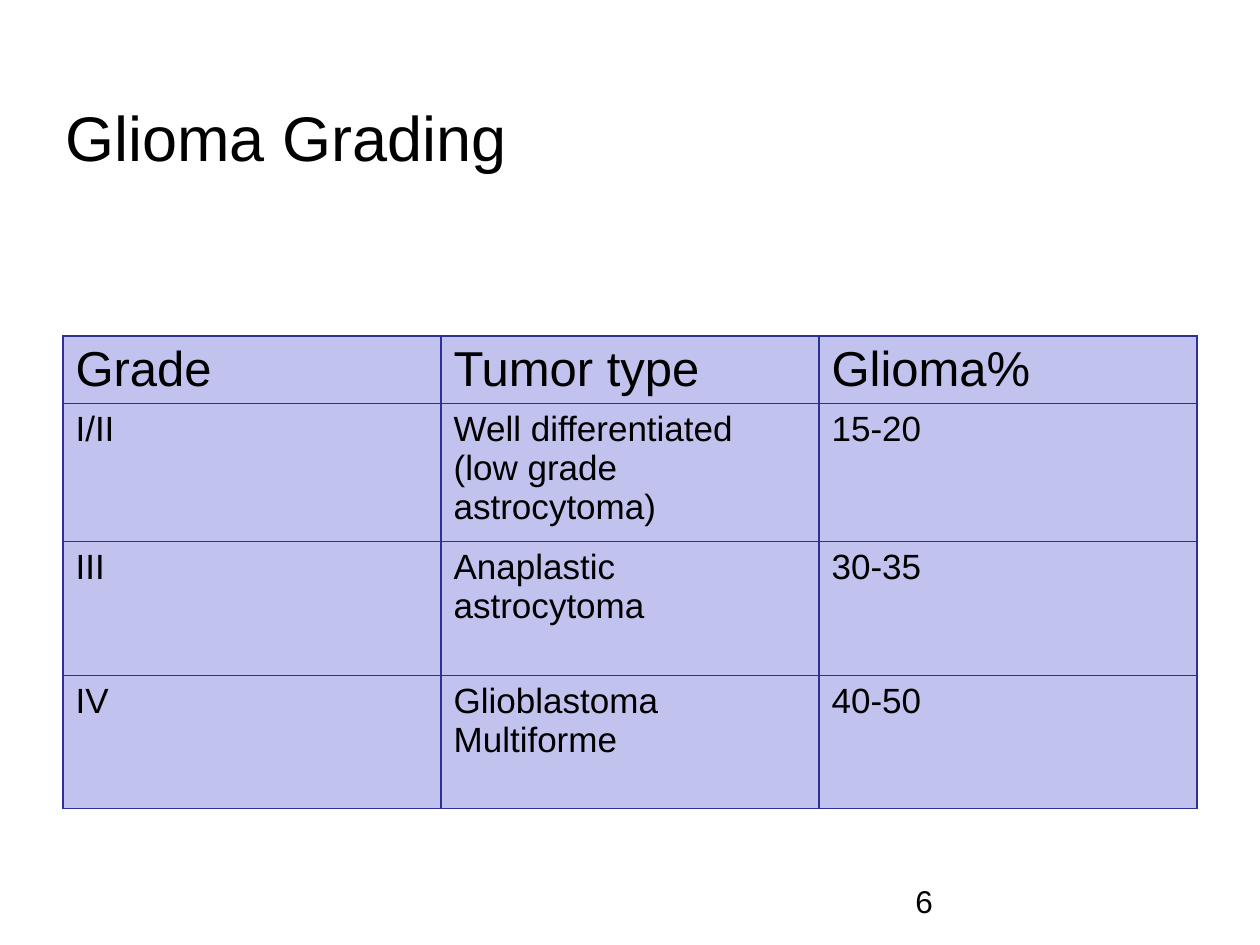
from typing import NamedTuple

from lxml import etree
from pptx import Presentation
from pptx import util as u
from pptx.dml.color import RGBColor
from pptx.enum import text
from pptx.oxml import ns

BLACK = RGBColor(0x00, 0x00, 0x00)
LAVENDER = RGBColor(0xC2, 0xC2, 0xEE)
NAVY = RGBColor(0x2F, 0x2F, 0x98)
FONT = "Arial"
BORDER_WIDTH = u.Pt(0.75)
COLUMN_WIDTH = 216


class TableRow(NamedTuple):
    height: float
    size: float
    labels: tuple[str, str, str]


ROWS = [
    TableRow(38.4, 28, ("Grade", "Tumor type", "Glioma%")),
    TableRow(79.2, 20, ("I/II", "Well differentiated (low grade astrocytoma)", "15-20")),
    TableRow(76.3, 20, ("III", "Anaplastic astrocytoma", "30-35")),
    TableRow(76.3, 20, ("IV", "Glioblastoma Multiforme", "40-50")),
]


def write_text(text_frame, content: str, size: float) -> None:
    text_frame.text = content
    paragraph = text_frame.paragraphs[0]
    paragraph.alignment = text.PP_ALIGN.LEFT
    font = paragraph.runs[0].font
    font.name = FONT
    font.size = u.Pt(size)
    font.bold = False
    font.color.rgb = BLACK


def add_borders(cell) -> None:
    properties = cell._tc.get_or_add_tcPr()
    for index, side in enumerate(("lnL", "lnR", "lnT", "lnB")):
        line = etree.Element(ns.qn(f"a:{side}"), w=str(BORDER_WIDTH))
        fill = etree.SubElement(line, ns.qn("a:solidFill"))
        etree.SubElement(fill, ns.qn("a:srgbClr"), val=str(NAVY))
        properties.insert(index, line)


def add_title(slide, content: str) -> None:
    title = slide.shapes.title
    title.left, title.top = u.Pt(30.2), u.Pt(23.8)
    title.width, title.height = u.Pt(648), u.Pt(108)
    title.text_frame.vertical_anchor = text.MSO_ANCHOR.MIDDLE
    write_text(title.text_frame, content, 36)


def add_grading_table(slide, rows: list[TableRow]) -> None:
    column_count = len(rows[0].labels)
    table = slide.shapes.add_table(
        len(rows), column_count, u.Pt(36), u.Pt(192),
        u.Pt(COLUMN_WIDTH * column_count), u.Pt(sum(row.height for row in rows)),
    ).table
    table.first_row = False
    table.horz_banding = False
    for column in table.columns:
        column.width = u.Pt(COLUMN_WIDTH)
    for row_index, row in enumerate(rows):
        table.rows[row_index].height = u.Pt(row.height)
        for column_index, label in enumerate(row.labels):
            cell = table.cell(row_index, column_index)
            write_text(cell.text_frame, label, row.size)
            cell.fill.solid()
            cell.fill.fore_color.rgb = LAVENDER
            add_borders(cell)


def add_page_number(slide, number: str) -> None:
    box = slide.shapes.add_textbox(u.Pt(516), u.Pt(500.4), u.Pt(168), u.Pt(28.8))
    box.text_frame.word_wrap = True
    write_text(box.text_frame, number, 18)


def main() -> None:
    presentation = Presentation()
    presentation.slide_width = u.Pt(720)
    presentation.slide_height = u.Pt(540)
    slide = presentation.slides.add_slide(presentation.slide_layouts[5])
    add_title(slide, "Glioma Grading")
    add_grading_table(slide, ROWS)
    add_page_number(slide, "6")
    presentation.save("out.pptx")


if __name__ == "__main__":
    main()
